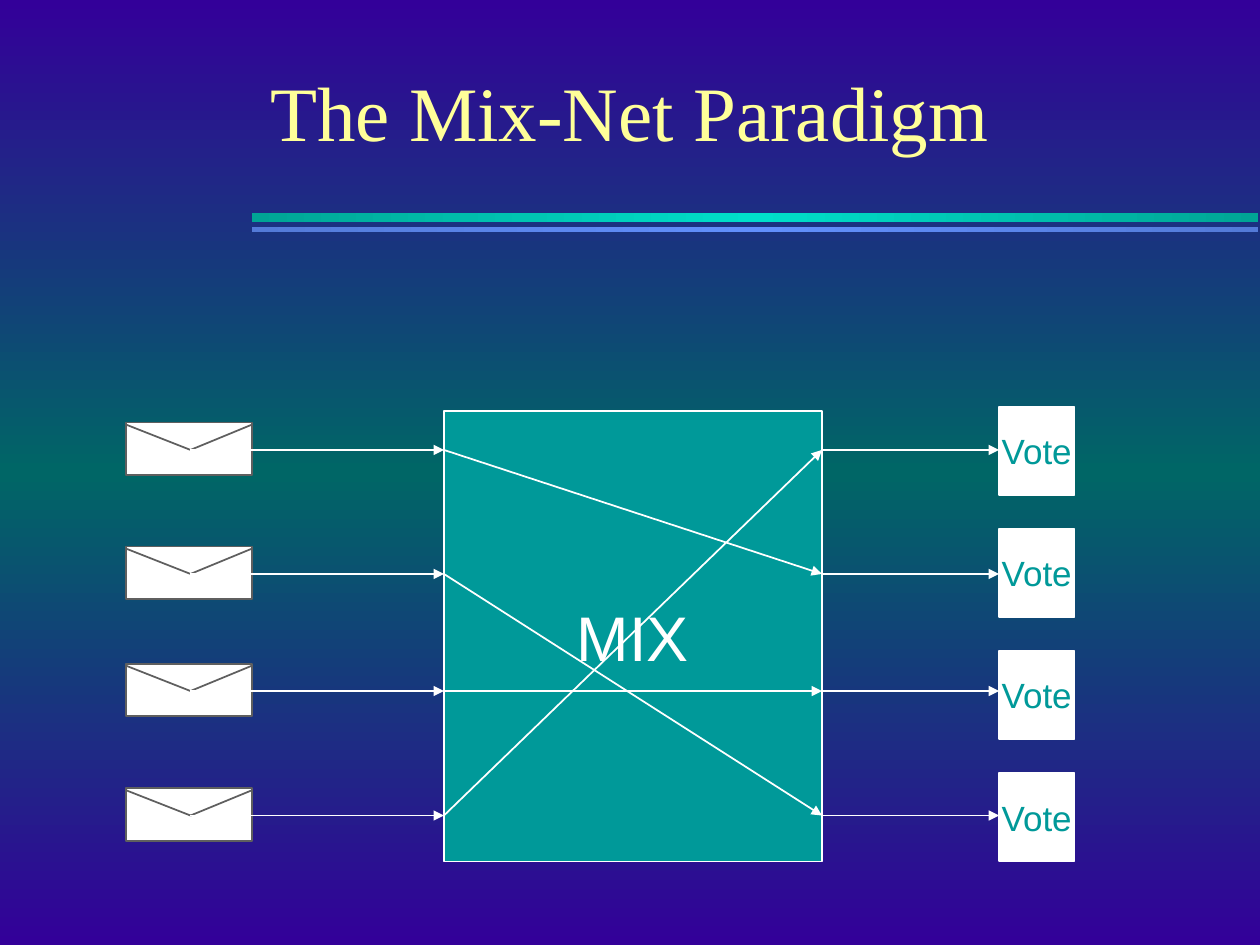
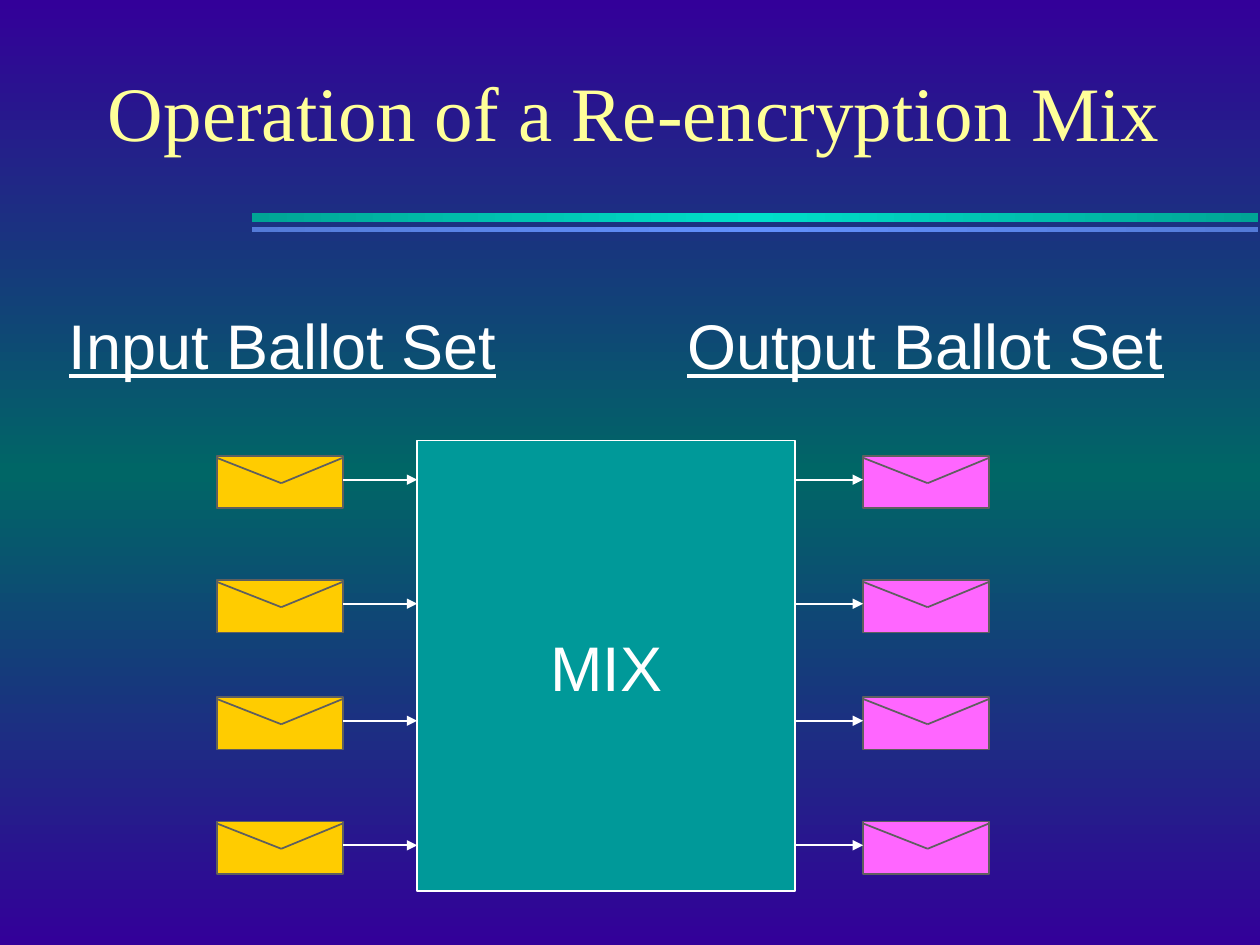
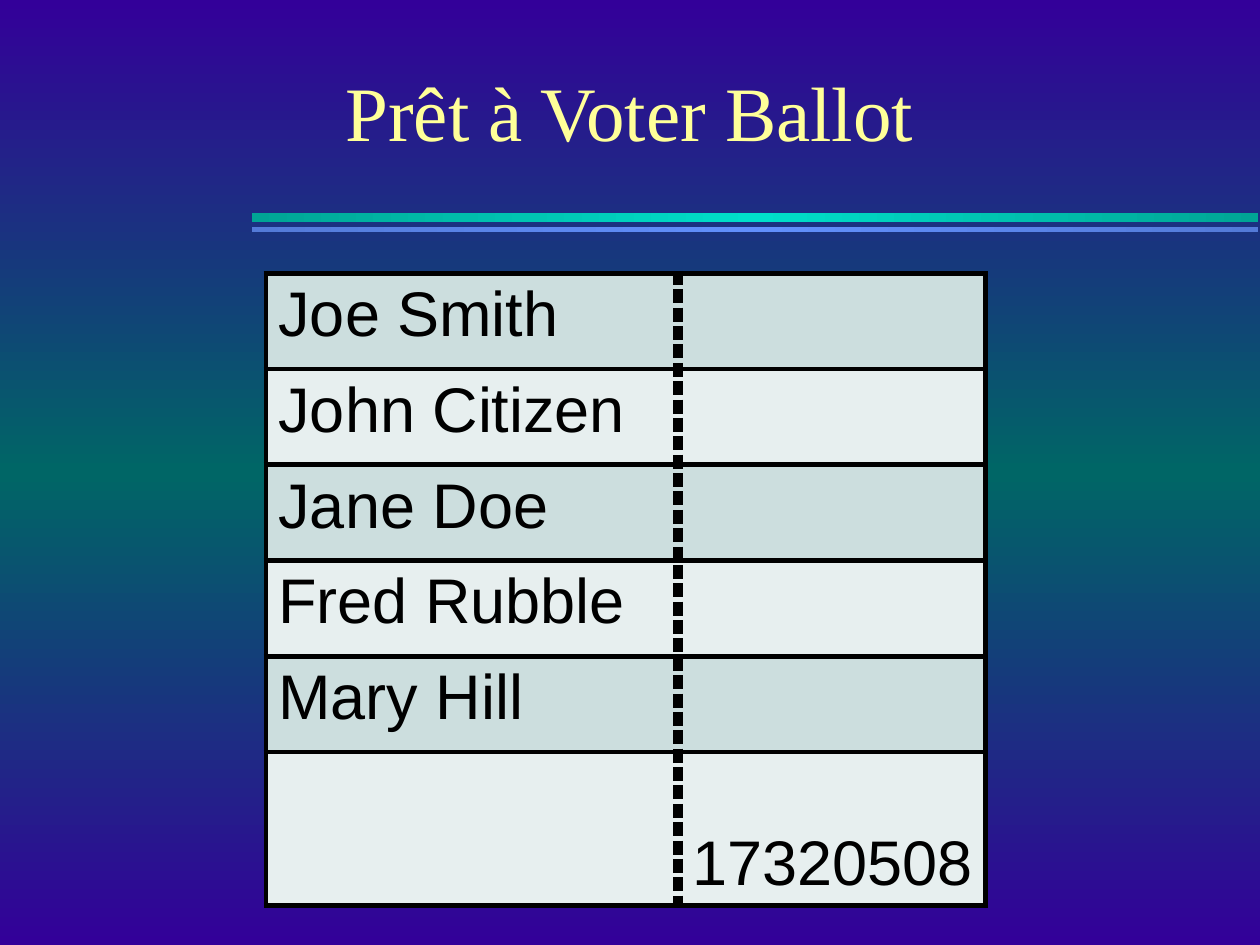
from dataclasses import dataclass

from lxml.etree import SubElement
from pptx import Presentation
from pptx.dml.color import RGBColor
from pptx.enum.shapes import MSO_CONNECTOR as Connector, MSO_SHAPE as Shape
from pptx.enum.text import MSO_ANCHOR as Anchor, MSO_AUTO_SIZE as AutoSize, PP_ALIGN as Align
from pptx.oxml.ns import qn
from pptx.util import Cm, Pt


@dataclass(frozen=True)
class Theme:
    background: tuple = ("330099", "006666", "330099")
    green_band: tuple = ("00A595", "00DFCA", "00A595")
    blue_band: tuple = ("537AD8", "618FFD", "537AD8")
    title: str = "FFFF99"
    white: str = "FFFFFF"
    black: str = "000000"
    teal: str = "009999"
    outline: str = "5F5F5F"
    gold: str = "FFCC00"
    pink: str = "FF66FF"
    rows: tuple = ("CCDEDE", "E7EFEF")
    title_font: str = "Times New Roman"
    body_font: str = "Arial"
    title_size: int = 44
    large: int = 36
    small: int = 20
    line: int = 1
    border: int = 3
    divider: int = 6


THEME = Theme()
ROW_OFFSETS = (0, 2.5, 4.86, 7.37)
MIX_WIDTH, MIX_HEIGHT = 7.62, 9.09
MIX_FIRST_ROW = 0.79
ENVELOPE_WIDTH, ENVELOPE_HEIGHT = 2.54, 1.06
FLAP_X, FLAP_TOP, FLAP_BOTTOM = 1.3, 0.04, 0.55
VOTE_WIDTH, VOTE_HEIGHT, VOTE_STEP = 1.52, 1.78, 2.46


def box(left, top, width, height):
    return Cm(left), Cm(top), Cm(width), Cm(height)


def row_positions(first):
    return [first + offset for offset in ROW_OFFSETS]


def set_gradient(owner, fill, colors, angle):
    fill.gradient()
    fill.gradient_angle = angle
    stops = owner.element.find(".//" + qn("a:gsLst"))
    for stop in list(stops):
        stops.remove(stop)
    for index, color in enumerate(colors):
        position = 100000 * index // (len(colors) - 1)
        stop = SubElement(stops, qn("a:gs"), pos=str(position))
        SubElement(stop, qn("a:srgbClr"), val=color)


def add_run(paragraph, text, size, color, font=THEME.body_font, underline=None):
    run = paragraph.add_run()
    run.text = text
    run.font.name = font
    run.font.size = Pt(size)
    run.font.color.rgb = RGBColor.from_string(color)
    run.font.underline = underline


def add_rectangle(shapes, left, top, width, height, fill, outline):
    shape = shapes.add_shape(Shape.RECTANGLE, *box(left, top, width, height))
    shape.shadow.inherit = False
    shape.fill.solid()
    shape.fill.fore_color.rgb = RGBColor.from_string(fill)
    shape.line.color.rgb = RGBColor.from_string(outline)
    shape.line.width = Pt(THEME.line)
    return shape


def add_labelled_box(slide, left, top, width, height, fill, text, size, color):
    shape = add_rectangle(slide.shapes, left, top, width, height, fill, THEME.white)
    frame = shape.text_frame
    frame.word_wrap = False
    frame.vertical_anchor = Anchor.MIDDLE
    paragraph = frame.paragraphs[0]
    paragraph.alignment = Align.CENTER
    add_run(paragraph, text, size, color)


def add_line(shapes, start, end, color):
    line = shapes.add_connector(Connector.STRAIGHT, *map(Cm, start + end))
    line.line.color.rgb = RGBColor.from_string(color)
    line.line.width = Pt(THEME.line)
    SubElement(line.element.spPr, qn("a:effectLst"))
    return line


def add_arrow(slide, start, end):
    arrow = add_line(slide.shapes, start, end, THEME.white)
    SubElement(arrow.element.spPr.find(qn("a:ln")), qn("a:tailEnd"), type="triangle")


def add_row_arrows(slide, left, right, rows):
    for y in rows:
        add_arrow(slide, (left, y), (right, y))


def add_envelopes(shapes, left, first_top, fill):
    for top in row_positions(first_top):
        add_rectangle(shapes, left, top, ENVELOPE_WIDTH, ENVELOPE_HEIGHT, fill, THEME.outline)
        tip = (left + FLAP_X, top + FLAP_BOTTOM)
        add_line(shapes, (left, top + FLAP_TOP), tip, THEME.outline)
        add_line(shapes, tip, (left + ENVELOPE_WIDTH, top + FLAP_TOP), THEME.outline)


def add_mix(slide, left, top):
    add_labelled_box(slide, left, top, MIX_WIDTH, MIX_HEIGHT, THEME.teal,
                     "MIX", THEME.large, THEME.white)


def add_heading(slide, left, width, text):
    heading = slide.shapes.add_textbox(*box(left, 6.05, width, 1.78))
    frame = heading.text_frame
    frame.word_wrap = False
    frame.auto_size = AutoSize.SHAPE_TO_FIT_TEXT
    add_run(frame.paragraphs[0], text, THEME.large, THEME.white, underline=True)


def set_title(slide, text, left=1.9, width=21.59):
    title = slide.shapes.title
    title.left, title.top, title.width, title.height = box(left, 0.64, width, 3.18)
    frame = title.text_frame
    frame.auto_size = AutoSize.NONE
    frame.vertical_anchor = Anchor.MIDDLE
    paragraph = frame.paragraphs[0]
    paragraph.alignment = Align.CENTER
    add_run(paragraph, text, THEME.title_size, THEME.title, THEME.title_font)


def style_master(presentation, slide):
    master = presentation.slide_master
    set_gradient(master, master.background.fill, THEME.background, 270)
    bands = ((4.29, 0.18, THEME.green_band), (4.57, 0.1, THEME.blue_band))
    for index, (top, height, colors) in enumerate(bands):
        band = slide.shapes.add_shape(Shape.RECTANGLE, *box(5.08, top, 20.29, height))
        band.shadow.inherit = False
        band.line.fill.background()
        set_gradient(band, band.fill, colors, 0)
        band.element.nvSpPr.cNvPr.set("id", str(20 + index))
        master.shapes.element.insert(2 + index, band.element)


def set_border(cell, side, width, dash):
    line = SubElement(cell._tc.get_or_add_tcPr(), qn("a:ln" + side), w=str(Pt(width)))
    fill = SubElement(line, qn("a:solidFill"))
    SubElement(fill, qn("a:srgbClr"), val=THEME.black)
    SubElement(line, qn("a:prstDash"), val=dash)


def style_cell(cell, fill, divider_side):
    for side in "LRTB":
        if side == divider_side:
            set_border(cell, side, THEME.divider, "sysDash")
        else:
            set_border(cell, side, THEME.border, "solid")
    cell.fill.solid()
    cell.fill.fore_color.rgb = RGBColor.from_string(fill)


def build_paradigm(slide):
    set_title(slide, "The Mix-Net Paradigm")
    mix_left, mix_top = 8.95, 8.28
    mix_right = mix_left + MIX_WIDTH
    envelope_left, vote_left = 2.54, 20.14
    rows = row_positions(mix_top + MIX_FIRST_ROW)
    add_mix(slide, mix_left, mix_top)
    add_envelopes(slide.shapes, envelope_left, rows[0] - FLAP_BOTTOM, THEME.white)
    add_row_arrows(slide, envelope_left + FLAP_X, mix_left, rows)
    add_row_arrows(slide, mix_right, vote_left, rows)
    for index in range(len(rows)):
        add_labelled_box(slide, vote_left, 8.2 + index * VOTE_STEP, VOTE_WIDTH, VOTE_HEIGHT,
                         THEME.white, "Vote", THEME.small, THEME.teal)
    for source, target in ((2, 2), (0, 1), (1, 3), (3, 0)):
        add_arrow(slide, (mix_left, rows[source]), (mix_right, rows[target]))


def build_operation(slide):
    set_title(slide, "Operation of a Re-encryption Mix", 0.84, 23.9)
    mix_left, mix_top = 8.41, 8.88
    input_left, output_left = 4.37, 17.4
    rows = row_positions(mix_top + MIX_FIRST_ROW)
    for left, fill in ((input_left, THEME.gold), (output_left, THEME.pink)):
        group = slide.shapes.add_group_shape()
        add_envelopes(group.shapes, left, 9.19, fill)
    add_heading(slide, 1.14, 9.12, "Input Ballot Set")
    add_heading(slide, 13.61, 10.11, "Output Ballot Set")
    add_row_arrows(slide, input_left + ENVELOPE_WIDTH, mix_left, rows)
    add_row_arrows(slide, mix_left + MIX_WIDTH, output_left, rows)
    add_mix(slide, mix_left, mix_top)


def build_ballot(slide):
    set_title(slide, "Prêt à Voter Ballot")
    candidates = ("Joe Smith", "John Citizen", "Jane Doe", "Fred Rubble", "Mary Hill")
    row_count = len(candidates) + 1
    row_height, column_widths = 1.93, (8.31, 6.2)
    table = slide.shapes.add_table(
        row_count, 2, *box(5.36, 5.51, sum(column_widths), row_count * row_height)).table
    table.first_row = False
    table.horz_banding = False
    for column, width in zip(table.columns, column_widths):
        column.width = Cm(width)
    for index, row in enumerate(table.rows):
        row.height = Cm(row_height)
        for cell, divider_side in zip(row.cells, "RL"):
            style_cell(cell, THEME.rows[index % 2], divider_side)
    for index, name in enumerate(candidates):
        paragraph = table.cell(index, 0).text_frame.paragraphs[0]
        add_run(paragraph, name, THEME.large, THEME.black)
    paragraph = table.cell(row_count - 1, 1).text_frame.paragraphs[0]
    paragraph.alignment = Align.RIGHT
    paragraph.line_spacing = 2.0
    add_run(paragraph, "17320508", THEME.large, THEME.black)


def main():
    presentation = Presentation()
    presentation.slide_width, presentation.slide_height = Cm(25.4), Cm(19.05)
    title_only = presentation.slide_layouts[5]
    builders = (build_paradigm, build_operation, build_ballot)
    slides = [presentation.slides.add_slide(title_only) for _ in builders]
    style_master(presentation, slides[0])
    for build, slide in zip(builders, slides):
        build(slide)
    presentation.save("out.pptx")


if __name__ == "__main__":
    main()
